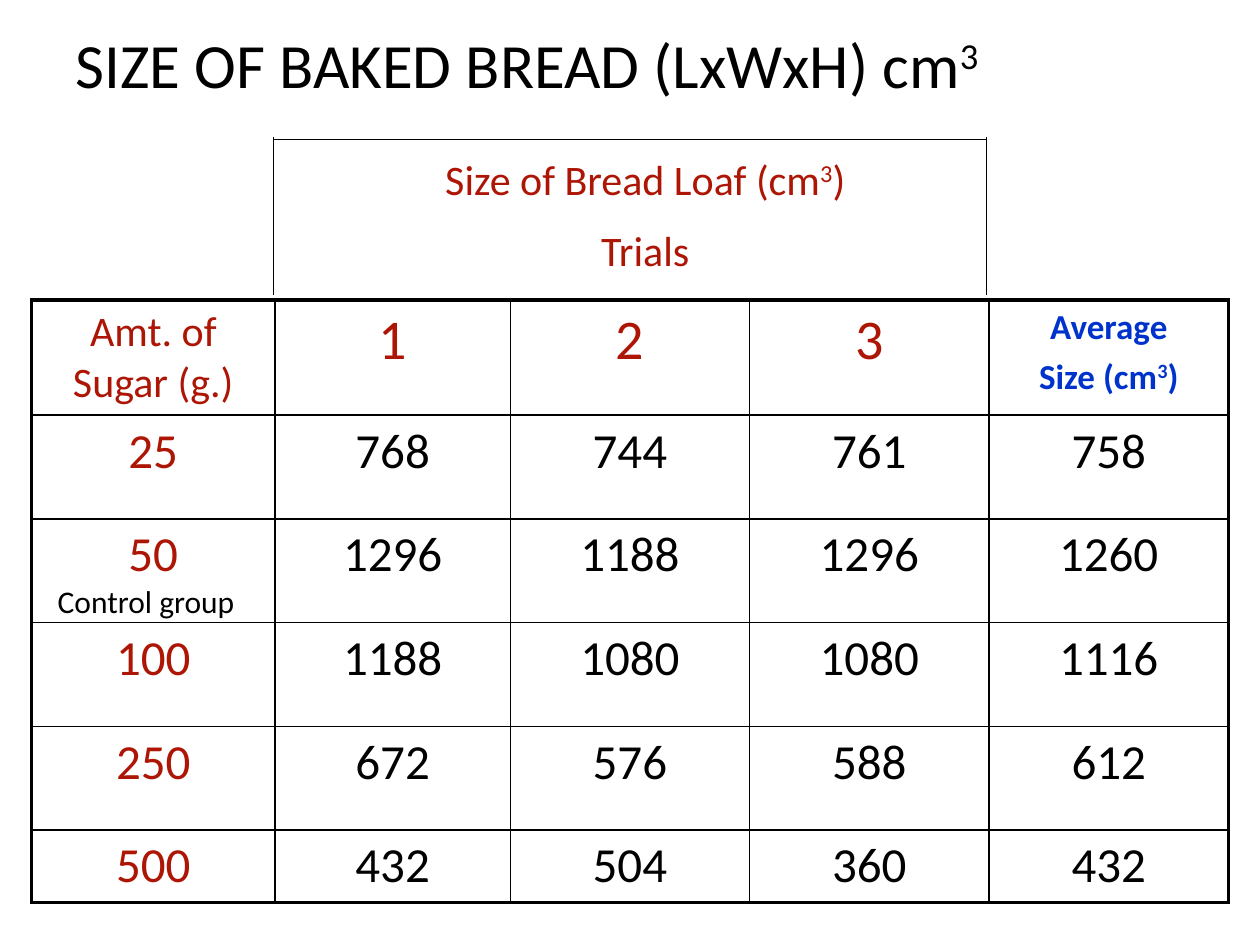
from lxml import etree
from pptx import Presentation
from pptx import util as u
from pptx.dml.color import RGBColor
from pptx.enum import shapes, text
from pptx.oxml import ns

Pt = u.Pt
FONT = "Calibri"
COLOURS = {"black": "000000", "white": "FFFFFF", "red": "AD1505", "blue": "0033CC"}
THIN, THICK = 1, 2.25

COLUMN_WIDTHS = [139.2, 134.4] + [136.8] * 3
ROW_HEIGHTS = [65.8] + [59.3] * 4 + [41.4]
HEADINGS = [
    (["Amt. of Sugar (g.)"], 24, "red"),
    (["1"], 32, "red"),
    (["2"], 32, "red"),
    (["3"], 32, "red"),
    (["Average", "Size (cm^3^)"], 20, "blue"),
]
# Sugar in grams, three trials, average
RESULTS = [
    (25, 768, 744, 761, 758),
    (50, 1296, 1188, 1296, 1260),
    (100, 1188, 1080, 1080, 1116),
    (250, 672, 576, 588, 612),
    (500, 432, 504, 360, 432),
]


def colour(name):
    return RGBColor.from_string(COLOURS[name])


def write(text_frame, lines, size, colour_name, align, gap=0, bold=False):
    """Fill a text frame; ^...^ marks superscript and gap is a share of the size."""
    for index, line in enumerate(lines):
        paragraph = text_frame.add_paragraph() if index else text_frame.paragraphs[0]
        paragraph.alignment = align
        if index:
            paragraph.space_before = Pt(size * gap)
        for position, piece in enumerate(line.split("^")):
            if not piece:
                continue
            run = paragraph.add_run()
            run.text = piece
            run.font.name = FONT
            run.font.size = Pt(size)
            run.font.bold = bold
            run.font.color.rgb = colour(colour_name)
            if position % 2:
                run._r.get_or_add_rPr().set("baseline", "30000")


def add_text(slide, box, lines, size, colour_name, align=text.PP_ALIGN.LEFT,
             gap=0, anchor=text.MSO_ANCHOR.TOP):
    shape = slide.shapes.add_textbox(*map(Pt, box))
    shape.text_frame.word_wrap = True
    shape.text_frame.vertical_anchor = anchor
    write(shape.text_frame, lines, size, colour_name, align, gap)
    return shape


def add_line(slide, start, end):
    line = slide.shapes.add_connector(
        shapes.MSO_CONNECTOR.STRAIGHT, *map(Pt, start + end))
    line.line.color.rgb = colour("black")
    line.line.width = Pt(0.75)
    etree.SubElement(line._element.spPr, ns.qn("a:effectLst"))


def set_borders(cell, widths):
    """Draw the left, right, top and bottom borders, in that order."""
    properties = cell._tc.get_or_add_tcPr()
    for index, (side, width) in enumerate(zip("LRTB", widths)):
        border = etree.Element(ns.qn(f"a:ln{side}"), w=str(Pt(width)))
        fill = etree.SubElement(border, ns.qn("a:solidFill"))
        etree.SubElement(fill, ns.qn("a:srgbClr"), val=COLOURS["black"])
        properties.insert(index, border)


def add_results_table(slide):
    rows = [HEADINGS] + [
        [([str(value)], 28, "black" if index else "red")
         for index, value in enumerate(result)]
        for result in RESULTS
    ]
    last_row, last_column = len(rows) - 1, len(COLUMN_WIDTHS) - 1
    table = slide.shapes.add_table(
        len(rows), len(COLUMN_WIDTHS), Pt(18), Pt(171.4),
        Pt(sum(COLUMN_WIDTHS)), Pt(sum(ROW_HEIGHTS))).table
    for column, width in zip(table.columns, COLUMN_WIDTHS):
        column.width = Pt(width)
    for row, height in zip(table.rows, ROW_HEIGHTS):
        row.height = Pt(height)

    for r, row in enumerate(rows):
        for c, (lines, size, colour_name) in enumerate(row):
            cell = table.cell(r, c)
            cell.fill.solid()
            cell.fill.fore_color.rgb = colour("white")
            outer = (c == 0, c == last_column, r == 0, r == last_row)
            set_borders(cell, [THICK if edge else THIN for edge in outer])
            write(cell.text_frame, lines, size, colour_name,
                  text.PP_ALIGN.CENTER, gap=0.2, bold=colour_name == "blue")


def add_trials_bracket(slide):
    left, right, top, bottom = 156.2, 563.8, 78.5, 168.5
    add_line(slide, (left, bottom), (left, top))
    add_line(slide, (left, top + 1.4), (right, top + 1.4))
    add_line(slide, (right, top), (right, bottom))


def main():
    presentation = Presentation()
    presentation.slide_width, presentation.slide_height = Pt(720), Pt(540)
    slide = presentation.slides.add_slide(presentation.slide_layouts[6])

    # Title
    add_text(slide, (36, 0, 648, 72), ["SIZE OF BAKED BREAD (LxWxH) cm^3^"],
             36, "black", anchor=text.MSO_ANCHOR.MIDDLE)

    # Results
    add_results_table(slide)

    # Heading over the trial columns
    add_trials_bracket(slide)
    heading = add_text(slide, (185.8, 84.2, 365.8, 79.9),
                       ["Size of Bread Loaf (cm^3^)", "Trials"], 24, "red",
                       text.PP_ALIGN.CENTER, gap=0.5)

    # Note under the 50 g row label
    note = add_text(slide, (25.9, 329, 131.8, 28.8), ["Control group"], 18, "black")
    for shape in (heading, note):
        shape.text_frame.auto_size = text.MSO_AUTO_SIZE.SHAPE_TO_FIT_TEXT

    presentation.save("out.pptx")


if __name__ == "__main__":
    main()
